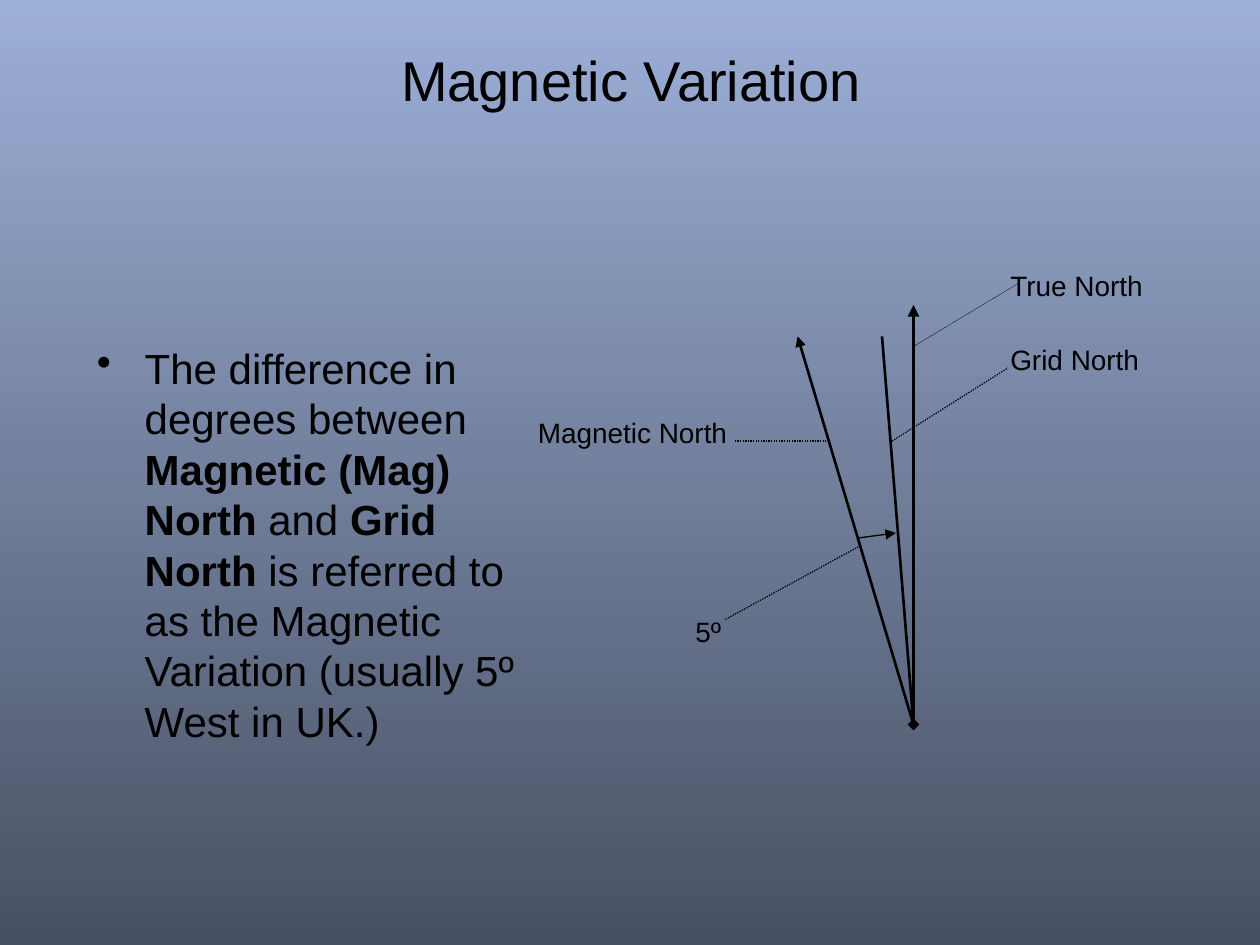
from lxml.etree import SubElement
from pptx import Presentation
from pptx.dml.color import RGBColor
from pptx.enum.dml import MSO_LINE
from pptx.enum.shapes import MSO_CONNECTOR
from pptx.enum.text import MSO_ANCHOR, PP_ALIGN
from pptx.oxml.ns import qn
from pptx.util import Inches, Pt

COLORS = {"ink": "000000", "sky": "9CAFD7", "dusk": "485163"}
FONT = "Arial"
ORIGIN = (7.25, 5.75)  # where the three norths meet


def color(name):
    return RGBColor.from_string(COLORS[name])


def paint_background(page):
    fill = page.background.fill
    fill.gradient()
    fill.gradient_angle = 270
    for stop, name, position in zip(fill.gradient_stops, ("sky", "dusk"), (0, 1)):
        stop.color.rgb = color(name)
        stop.position = position


def add_text(page, spans, left, top, width, height, size,
             align=PP_ALIGN.LEFT, anchor=MSO_ANCHOR.TOP, bullet=False):
    """Add a one-paragraph box; spans are (text, bold) pairs."""
    box = page.shapes.add_textbox(*map(Inches, (left, top, width, height)))
    frame = box.text_frame
    frame.word_wrap = True
    frame.vertical_anchor = anchor
    para = frame.paragraphs[0]
    para.alignment = align
    if bullet:
        props = para._p.get_or_add_pPr()
        props.set("marL", str(Inches(0.38)))
        props.set("indent", str(-Inches(0.38)))
        SubElement(props, qn("a:buChar"), char="•")
    para.font.name = FONT
    para.font.size = Pt(size)
    para.font.color.rgb = color("ink")
    for text, bold in spans:
        span = para.add_run()
        span.text = text
        if bold:
            span.font.bold = True


def add_line(page, start, end, weight, dotted=False, head=None, tail=None):
    line = page.shapes.add_connector(
        MSO_CONNECTOR.STRAIGHT, *map(Inches, (*start, *end)))
    line.line.color.rgb = color("ink")
    line.line.width = Pt(weight)
    if dotted:
        line.line.dash_style = MSO_LINE.ROUND_DOT
    for tag, kind in (("a:headEnd", head), ("a:tailEnd", tail)):
        if kind:
            SubElement(line.line._get_or_add_ln(), qn(tag), type=kind)
    SubElement(line._element.spPr, qn("a:effectLst"))


def main():
    deck = Presentation()
    deck.slide_width, deck.slide_height = Inches(10), Inches(7.5)
    page = deck.slides.add_slide(deck.slide_layouts[6])
    paint_background(page)

    # Title and definition
    add_text(page, [("Magnetic Variation", False)], 0.51, 0, 9, 1.25, 32,
             align=PP_ALIGN.CENTER, anchor=MSO_ANCHOR.MIDDLE)
    definition = [
        ("The difference in degrees between ", False),
        ("Magnetic (Mag) North", True),
        (" and ", False),
        ("Grid North", True),
        (" is referred to as the Magnetic Variation (usually 5º West in UK.)", False),
    ]
    add_text(page, definition, 0.67, 2.67, 3.58, 3.33, 24, bullet=True)

    # True, grid and magnetic north
    add_line(page, ORIGIN, (7.25, 2.42), 2.25, head="diamond", tail="triangle")
    add_line(page, (7, 2.67), ORIGIN, 1.5)
    add_line(page, ORIGIN, (6.33, 2.67), 1.5, tail="triangle")

    # Variation arrow from magnetic to grid north
    add_line(page, (6.81, 4.27), (7.11, 4.23), 0.75, tail="triangle")

    # Dotted leaders and their labels
    leaders = [
        ((7.25, 2.75), (8.08, 2.25), 0.25),
        ((7.08, 3.5), (8, 2.92), 0.75),
        ((6.58, 3.5), (5.83, 3.5), 0.75),
        ((6.83, 4.33), (5.75, 4.92), 0.75),
    ]
    for start, end, weight in leaders:
        add_line(page, start, end, weight, dotted=True)
    labels = [
        ("True North", 7.92, 2.08, 1.42),
        ("Grid North", 7.92, 2.67, 1.42),
        ("Magnetic North", 4.17, 3.25, 1.75),
        ("5º", 5.42, 4.83, 0.5),
    ]
    for text, left, top, width in labels:
        add_text(page, [(text, False)], left, top, width, 0.37, 16)

    deck.save("out.pptx")


if __name__ == "__main__":
    main()
